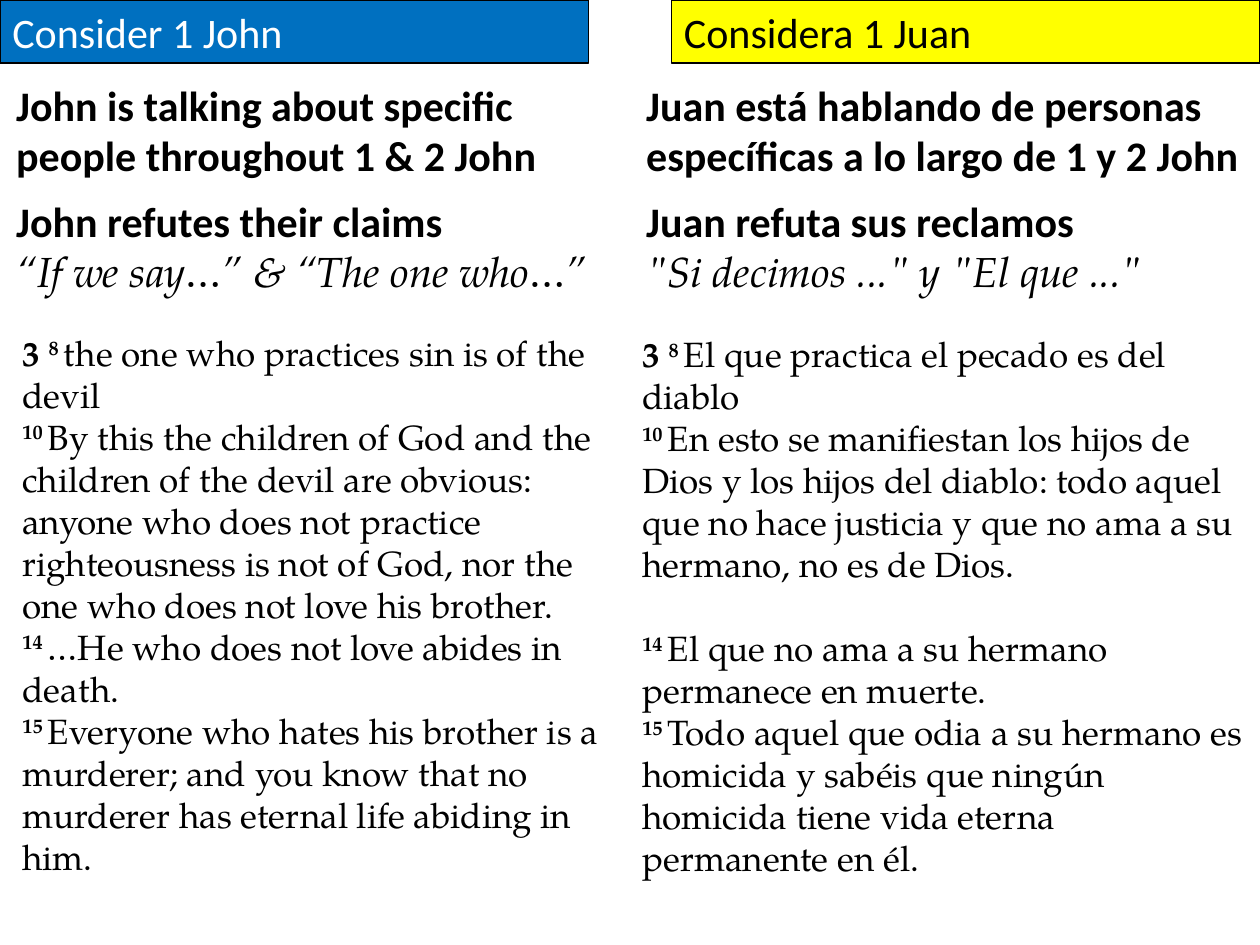
"""Build a bilingual slide that sets 1 John in English beside Spanish."""
from pptx import Presentation
from pptx.dml.color import RGBColor
from pptx.enum.shapes import MSO_SHAPE as Shape
from pptx.enum.text import MSO_ANCHOR as Anchor, MSO_AUTO_SIZE as AutoSize, PP_ALIGN as Align
from pptx.util import Inches, Pt

THEME = {
    "heading_font": "Calibri",
    "scripture_font": "TeX Gyre Pagella",
    "heading_size": Pt(24),
    "verse_size": Pt(20),
    "verse_gap": Pt(24),
    "border": Pt(0.75),
    "superscript": "30000",
    "black": RGBColor(0x00, 0x00, 0x00),
    "white": RGBColor(0xFF, 0xFF, 0xFF),
    "blue": RGBColor(0x00, 0x70, 0xC0),
    "yellow": RGBColor(0xFF, 0xFF, 0x00),
}

LANGUAGES = [
    {
        "title": "Consider 1 John",
        "banner_fill": "blue",
        "banner_ink": "white",
        "banner_left": 0,
        "points_left": 0.03,
        "verses_at": (0.08, 2.58, 5, 4.48),
        "claim": "John is talking about specific people throughout 1 & 2 John",
        "rebuttal": "John refutes their claims",
        "quote": "“If we say…” & “The one who…”",
        "verses": [
            ("3 ", "8", "the one who practices sin is of the devil"),
            ("", "10", "By this the children of God and the children of the devil are "
                       "obvious: anyone who does not practice righteousness is not of God, "
                       "nor the one who does not love his brother."),
            ("", "14", "…He who does not love abides in death."),
            ("", "15", "Everyone who hates his brother is a murderer; and you know that "
                       "no murderer has eternal life abiding in him."),
        ],
        "spaced_verses": (),
    },
    {
        "title": "Considera 1 Juan",
        "banner_fill": "yellow",
        "banner_ink": "black",
        "banner_left": 5.33,
        "points_left": 5.03,
        "verses_at": (5, 2.59, 5, 4.36),
        "claim": "Juan está hablando de personas específicas a lo largo de 1 y 2 John",
        "rebuttal": "Juan refuta sus reclamos",
        "quote": '"Si decimos ..." y "El que ..."',
        "verses": [
            ("3 ", "8", "El que practica el pecado es del diablo"),
            ("", "10", "En esto se manifiestan los hijos de Dios y los hijos del diablo: "
                       "todo aquel que no hace justicia y que no ama a su hermano, "
                       "no es de Dios."),
            ("", "14", "El que no ama a su hermano permanece en muerte."),
            ("", "15", "Todo aquel que odia a su hermano es homicida y sabéis que ningún "
                       "homicida tiene vida eterna permanente en él."),
        ],
        "spaced_verses": ("14",),
    },
]

BANNER_SIZE = (4.67, 0.5)
POINT_SIZE = (4.97, 0.91)
CLAIM_TOP, REBUTTAL_TOP = 0.58, 1.5


def style(run, font, size, ink="black", bold=False, italic=False):
    """Apply the theme's type settings to a run."""
    run.font.name = THEME[font]
    run.font.size = THEME[size]
    run.font.color.rgb = THEME[ink]
    run.font.bold = bold
    run.font.italic = italic


def add_frame(slide, box):
    """Add a wrapping text box and return its text frame."""
    frame = slide.shapes.add_textbox(*map(Inches, box)).text_frame
    frame.word_wrap = True
    frame.auto_size = AutoSize.SHAPE_TO_FIT_TEXT
    return frame


def add_banner(slide, language):
    """Add the coloured title bar of one language."""
    banner = slide.shapes.add_shape(
        Shape.RECTANGLE, *map(Inches, (language["banner_left"], 0, *BANNER_SIZE)))
    banner.shadow.inherit = False
    banner.fill.solid()
    banner.fill.fore_color.rgb = THEME[language["banner_fill"]]
    banner.line.color.rgb = THEME["black"]
    banner.line.width = THEME["border"]
    frame = banner.text_frame
    frame.word_wrap = True
    frame.auto_size = AutoSize.SHAPE_TO_FIT_TEXT
    frame.vertical_anchor = Anchor.TOP
    frame.text = language["title"]
    title = frame.paragraphs[0]
    title.alignment = Align.LEFT
    style(title.runs[0], "heading_font", "heading_size", language["banner_ink"])


def add_points(slide, language):
    """Add the claim, and the rebuttal with its quotation."""
    left = language["points_left"]
    claim = add_frame(slide, (left, CLAIM_TOP, *POINT_SIZE))
    claim.text = language["claim"]
    rebuttal = add_frame(slide, (left, REBUTTAL_TOP, *POINT_SIZE))
    rebuttal.text = language["rebuttal"]
    for frame in (claim, rebuttal):
        style(frame.paragraphs[0].runs[0], "heading_font", "heading_size", bold=True)
    quote = rebuttal.add_paragraph()
    quote.text = language["quote"]
    style(quote.runs[0], "scripture_font", "heading_size", italic=True)


def add_verses(slide, language):
    """Add the numbered verses of one language."""
    frame = add_frame(slide, language["verses_at"])
    for index, (chapter, number, words) in enumerate(language["verses"]):
        verse = frame.add_paragraph() if index else frame.paragraphs[0]
        if number in language["spaced_verses"]:
            verse.space_before = THEME["verse_gap"]
        for part, bold, raised in (
            (chapter, True, False), (number + " ", True, True), (words, False, False)
        ):
            if part:
                run = verse.add_run()
                run.text = part
                style(run, "scripture_font", "verse_size", bold=bold)
                if raised:
                    run._r.get_or_add_rPr().set("baseline", THEME["superscript"])


def main():
    """Compose the slide and save it."""
    deck = Presentation()
    deck.slide_width, deck.slide_height = Inches(10), Inches(7.5)
    slide = deck.slides.add_slide(deck.slide_layouts[6])
    for language in LANGUAGES:
        add_points(slide, language)
        add_verses(slide, language)
        add_banner(slide, language)
    deck.save("out.pptx")


if __name__ == "__main__":
    main()
